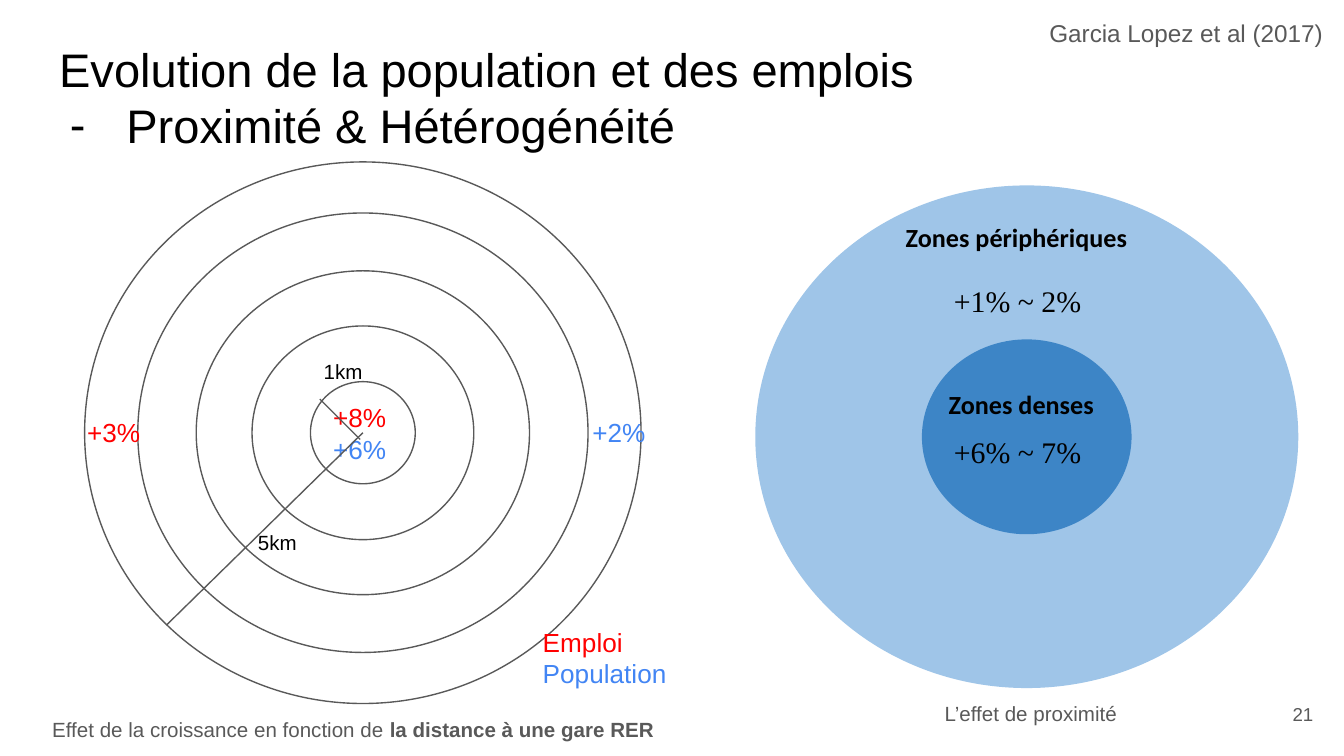
from lxml import etree
from pptx import Presentation
from pptx.dml.color import RGBColor
from pptx.enum.shapes import MSO_CONNECTOR as Connector, MSO_SHAPE as Shape
from pptx.enum.text import MSO_ANCHOR as Anchor, MSO_AUTO_SIZE as AutoSize, PP_ALIGN as Align
from pptx.oxml.ns import qn
from pptx.util import Inches, Pt

BLACK, GREY, RED, BLUE = "000000", "595959", "FF0000", "4285F4"
LIGHT_ZONE, DARK_ZONE = "9FC5E8", "3D85C6"


def color(value):
    return RGBColor.from_string(value)


def style_font(font, size, ink, name="Arial", bold=None):
    font.size, font.name, font.bold = Pt(size), name, bold
    font.color.rgb = color(ink)


def set_insets(frame):
    frame.margin_left = frame.margin_right = Inches(0.1)
    frame.margin_top = frame.margin_bottom = Inches(0.1)
    frame.word_wrap = True


def add_span(para, text, size, ink, name="Arial", bold=None):
    span = para.add_run()
    span.text = text
    style_font(span.font, size, ink, name, bold)


def add_text(parent, left, top, width, height, lines, size, name="Arial", bold=None):
    """Add a text box; lines holds (text, colour) pairs, one per paragraph."""
    box = parent.shapes.add_textbox(*map(Inches, (left, top, width, height)))
    frame = box.text_frame
    set_insets(frame)
    for index, (text, ink) in enumerate(lines):
        para = frame.add_paragraph() if index else frame.paragraphs[0]
        add_span(para, text, size, ink, name, bold)
    return box


def add_ellipse(parent, center_x, center_y, width, height, fill=None):
    """Add a centred ellipse: filled without outline, or outlined in grey."""
    ellipse = parent.shapes.add_shape(
        Shape.OVAL, Inches(center_x - width / 2), Inches(center_y - height / 2),
        Inches(width), Inches(height))
    ellipse.shadow.inherit = False
    if fill:
        ellipse.fill.solid()
        ellipse.fill.fore_color.rgb = color(fill)
        ellipse.line.fill.background()
    else:
        ellipse.fill.background()
        ellipse.line.color.rgb = color(GREY)
        ellipse.line.width = Pt(0.75)


def add_radius(parent, *ends):
    radius = parent.shapes.add_connector(Connector.STRAIGHT, *map(Inches, ends))
    radius.line.color.rgb = color(GREY)
    radius.line.width = Pt(0.75)
    etree.SubElement(radius._element.spPr, qn("a:effectLst"))


def add_title(page, left, top, width, height):
    title = page.shapes.title
    title.left, title.top, title.width, title.height = map(Inches, (left, top, width, height))
    frame = title.text_frame
    set_insets(frame)
    frame.auto_size = AutoSize.NONE
    frame.vertical_anchor = Anchor.TOP
    frame.text = "Evolution de la population et des emplois\nProximité & Hétérogénéité"
    for para in frame.paragraphs:
        para.alignment = Align.LEFT
        style_font(para.font, 25.2, BLACK)
    # Dash bullet with a hanging indent on the second line
    props = frame.paragraphs[1]._p.get_or_add_pPr()
    props.set("marL", str(Inches(0.5)))
    props.set("indent", str(Inches(-0.42)))
    props.insert(0, etree.Element(qn("a:buFont"), typeface="Arial"))
    props.insert(1, etree.Element(qn("a:buChar"), char="-"))


def add_distance_rings(page, left, top):
    group = page.shapes.add_group_shape()
    center_x, center_y = left + 2.41, top + 2.01
    for width, height in ((4.14, 4.03), (3.35, 3.27), (2.48, 2.41), (1.65, 1.59), (0.78, 0.76)):
        add_ellipse(group, center_x, center_y, width, height)

    # Outer growth rates, set apart by a tab stop
    outer = add_text(group, left + 0.26, top + 1.79, 4.47, 0.44, [("+3%\t", RED)], 14)
    para = outer.text_frame.paragraphs[0]
    add_span(para, "+2%", 14, BLUE)
    tabs = etree.Element(qn("a:tabLst"))
    etree.SubElement(tabs, qn("a:tab"), pos=str(Inches(3.76)), algn="l")
    para._p.get_or_add_pPr().insert(0, tabs)

    # Inner growth rates and legend
    add_text(group, left + 2.09, top + 1.68, 0.64, 0.67, [("+8%", RED), ("+6%", BLUE)], 14)
    add_text(group, left + 3.65, top + 3.35, 1.26, 0.67, [("Emploi", RED), ("Population", BLUE)], 14)

    # Radii and their distances
    add_radius(group, left + 2.09, top + 1.76, left + 2.39, top + 2.06)
    add_radius(group, left + 0.95, top + 3.44, center_x, center_y)
    add_text(group, left + 2.02, top + 1.37, 0.78, 0.39, [("1km", BLACK)], 11)
    add_text(group, left + 1.53, top + 2.64, 0.78, 0.39, [("5km", BLACK)], 11)

    # Caption
    caption = add_text(group, left, top + 4.03, 4.83, 0.39,
                       [("Effet de la croissance en fonction de ", GREY)], 11)
    add_span(caption.text_frame.paragraphs[0], "la distance à une gare RER", 11, GREY, bold=True)


def add_density_zones(page, left, top):
    group = page.shapes.add_group_shape()
    center_x, center_y = left + 2.02, top + 1.87
    add_ellipse(group, center_x, center_y, 4.04, 3.74, LIGHT_ZONE)
    add_ellipse(group, center_x, center_y, 1.56, 1.45, DARK_ZONE)
    for name, x, y in (("Zones périphériques", 1.02, 0.17), ("Zones denses", 1.34, 1.41)):
        add_text(group, left + x, top + y, 2.55, 0.44, [(name, BLACK)], 14, "Calibri", True)
    for rate, y, width, height in (("+1% ~ 2%", 0.62, 1.36, 0.71), ("+6% ~ 7%", 1.75, 1.43, 0.47)):
        add_text(group, left + 1.38, top + y, width, height, [(rate, BLACK)], 16, "Times New Roman")


def add_citation(page, left, top):
    citation = add_text(page, left, top, 2.29, 0.42, [("Garcia Lopez et al (2017)", GREY)], 13)
    para = citation.text_frame.paragraphs[0]
    para.line_spacing, para.space_after = 1.15, Pt(12)


def add_footer(page, left, top):
    # Page number, then the caption of the zones
    number = add_text(page, left + 2.34, top, 0.6, 0.43, [("21", GREY)], 10)
    number.text_frame.vertical_anchor = Anchor.MIDDLE
    number.text_frame.paragraphs[0].alignment = Align.RIGHT
    add_text(page, left, top + 0.02, 2.73, 0.39, [("L’effet de proximité", GREY)], 11)


def main():
    deck = Presentation()
    # Widescreen, 16:9
    deck.slide_width = Inches(10)
    deck.slide_height = Inches(10 * 9 / 16)
    page = deck.slides.add_slide(deck.slide_layouts[5])
    add_title(page, 0.34, 0.2, 9.32, 0.63)
    add_distance_rings(page, 0.29, 1.21)
    add_density_zones(page, 5.62, 1.38)
    add_citation(page, 7.71, 0)
    add_footer(page, 6.93, 5.1)
    deck.save("out.pptx")


if __name__ == "__main__":
    main()
